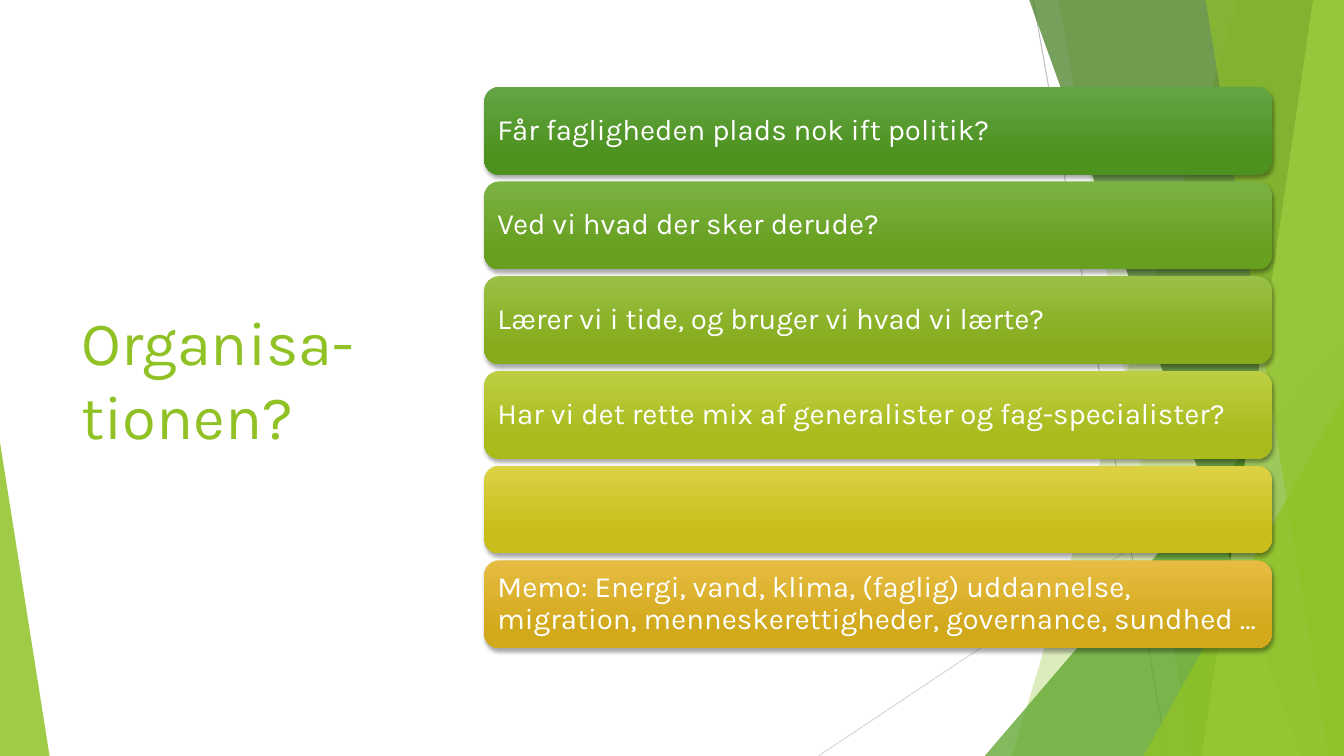
import pptx
import pptx.util
import pptx.dml.color
import pptx.enum.shapes
import pptx.enum.text
import pptx.oxml
import pptx.oxml.ns

Pt = pptx.util.Pt
RGB = pptx.dml.color.RGBColor
MSO_SHAPE = pptx.enum.shapes.MSO_SHAPE
ANCHOR = pptx.enum.text.MSO_ANCHOR

W, H = 960, 540
FONT = "Karla"
WHITE = RGB(0xFF, 0xFF, 0xFF)
LIME = RGB(0x90, 0xC2, 0x26)
GREEN = RGB(0x54, 0xA0, 0x21)
DARK_GREEN = RGB(0x3F, 0x78, 0x19)
PALE_LIME = RGB(0xC0, 0xE4, 0x74)
GREY = RGB(0xBF, 0xBF, 0xBF)
LIGHT_GREY = RGB(0xD9, 0xD9, 0xD9)

QUESTIONS = [
    ("Får fagligheden plads nok ift politik?", RGB(0x63, 0xA5, 0x45), RGB(0x4D, 0x92, 0x1E)),
    ("Ved vi hvad der sker derude?", RGB(0x7B, 0xB2, 0x44), RGB(0x67, 0x9F, 0x1E)),
    ("Lærer vi i tide, og bruger vi hvad vi lærte?", RGB(0x99, 0xC0, 0x44), RGB(0x86, 0xAC, 0x1D)),
    ("Har vi det rette mix af generalister og fag-specialister?",
     RGB(0xBD, 0xCE, 0x43), RGB(0xA9, 0xBA, 0x1B)),
    ("", RGB(0xDC, 0xD1, 0x43), RGB(0xC8, 0xBD, 0x1A)),
    ("Memo: Energi, vand, klima, (faglig) uddannelse, migration, "
     "menneskerettigheder, governance, sundhed …", RGB(0xE7, 0xBC, 0x43), RGB(0xD2, 0xA9, 0x1B)),
]


def paint(sp, color, opacity):
    sp.shadow.inherit = False
    sp.line.fill.background()
    sp.fill.solid()
    sp.fill.fore_color.rgb = color
    clr = sp._element.spPr.find(".//" + pptx.oxml.ns.qn("a:srgbClr"))
    clr.append(clr.makeelement(pptx.oxml.ns.qn("a:alpha"), {"val": str(opacity * 1000)}))


def add_line(slide, x1, y1, x2, y2, color):
    line = slide.shapes.add_connector(
        pptx.enum.shapes.MSO_CONNECTOR.STRAIGHT, Pt(x1), Pt(y1), Pt(x2), Pt(y2))
    line.line.color.rgb = color
    line.line.width = Pt(0.75)
    spPr = line._element.spPr
    spPr.append(spPr.makeelement(pptx.oxml.ns.qn("a:effectLst"), {}))


def add_band(slide, x_top, x_bottom, right, height, color, opacity):
    fb = slide.shapes.build_freeform(Pt(x_top), 0)
    fb.add_line_segments(
        [(Pt(right), 0), (Pt(right), Pt(height)), (Pt(x_bottom), Pt(height))], close=True)
    paint(fb.convert_to_shape(), color, opacity)


def add_triangle(slide, x, y, w, h, apex, color, opacity):
    sp = slide.shapes.add_shape(MSO_SHAPE.ISOSCELES_TRIANGLE, Pt(x), Pt(y), Pt(w), Pt(h))
    sp.adjustments[0] = apex
    paint(sp, color, opacity)


def add_facets(slide, w, h):
    add_line(slide, w - 222, 0, w - 126, h, GREY)
    add_line(slide, w, 290, w - 375.4, h, LIGHT_GREY)
    add_band(slide, w - 75.8, w - 237, w, h, LIME, 30)
    add_band(slide, w - 204, w - 108, w, h, LIME, 20)
    add_triangle(slide, w - 256.6, 240, 256.6, h - 240, 1, GREEN, 72)
    add_band(slide, w - 224.8, w - 30.6, w, h, DARK_GREEN, 70)
    add_band(slide, w - 22, w - 101.6, w, h, PALE_LIME, 70)
    add_band(slide, w - 98.8, w - 11, w, h, LIME, 65)
    add_triangle(slide, w - 143.2, 283, 143.2, h - 283, 1, LIME, 80)
    add_triangle(slide, 0, 316, 35.4, h - 316, 0, LIME, 85)


def style_text(tf, size, color):
    tf.word_wrap = True
    tf.vertical_anchor = ANCHOR.MIDDLE
    p = tf.paragraphs[0]
    p.alignment = pptx.enum.text.PP_ALIGN.LEFT
    for r in p.runs:
        r.font.name = FONT
        r.font.size = Pt(size)
        r.font.color.rgb = color
    return p


def add_title(slide, x, y, w, h):
    tf = slide.shapes.add_textbox(Pt(x), Pt(y), Pt(w), Pt(h)).text_frame
    tf.text = "Organisa-tionen?"
    style_text(tf, 44, LIME)


def add_bar(slide, x, y, w, h, text, light, dark):
    sp = slide.shapes.add_shape(MSO_SHAPE.ROUNDED_RECTANGLE, Pt(x), Pt(y), Pt(w), Pt(h))
    sp.line.fill.background()
    sp.fill.gradient()
    sp.fill.gradient_angle = 270
    for stop, position, color in zip(sp.fill.gradient_stops, (0, 0.78), (light, dark)):
        stop.position = position
        stop.color.rgb = color
    sp.shadow.inherit = False
    effects = sp._element.spPr.find(pptx.oxml.ns.qn("a:effectLst"))
    effects.append(pptx.oxml.parse_xml(
        f'<a:outerShdw {pptx.oxml.ns.nsdecls("a")} blurRad="{Pt(3)}" dist="{Pt(2)}" '
        'dir="5400000" rotWithShape="0"><a:srgbClr val="000000">'
        '<a:alpha val="35000"/></a:srgbClr></a:outerShdw>'))
    if text:
        tf = sp.text_frame
        tf.text = text
        tf.margin_left = tf.margin_right = Pt(6.3)
        tf.margin_top = tf.margin_bottom = Pt(3)
        style_text(tf, 21, WHITE).line_spacing = 0.9


def add_questions(slide, x, y, w, h):
    gap = 4.9
    bar_h = (h - gap * (len(QUESTIONS) - 1)) / len(QUESTIONS)
    for i, (text, light, dark) in enumerate(QUESTIONS):
        add_bar(slide, x, y + i * (bar_h + gap), w, bar_h, text, light, dark)


def main():
    prs = pptx.Presentation()
    prs.slide_width, prs.slide_height = Pt(W), Pt(H)
    slide = prs.slides.add_slide(prs.slide_layouts[6])
    add_facets(slide, W, H)
    add_title(slide, 51, 109, 279, 322)
    add_questions(slide, 346, 62, 562.5, 401)
    prs.save("out.pptx")


if __name__ == "__main__":
    main()
